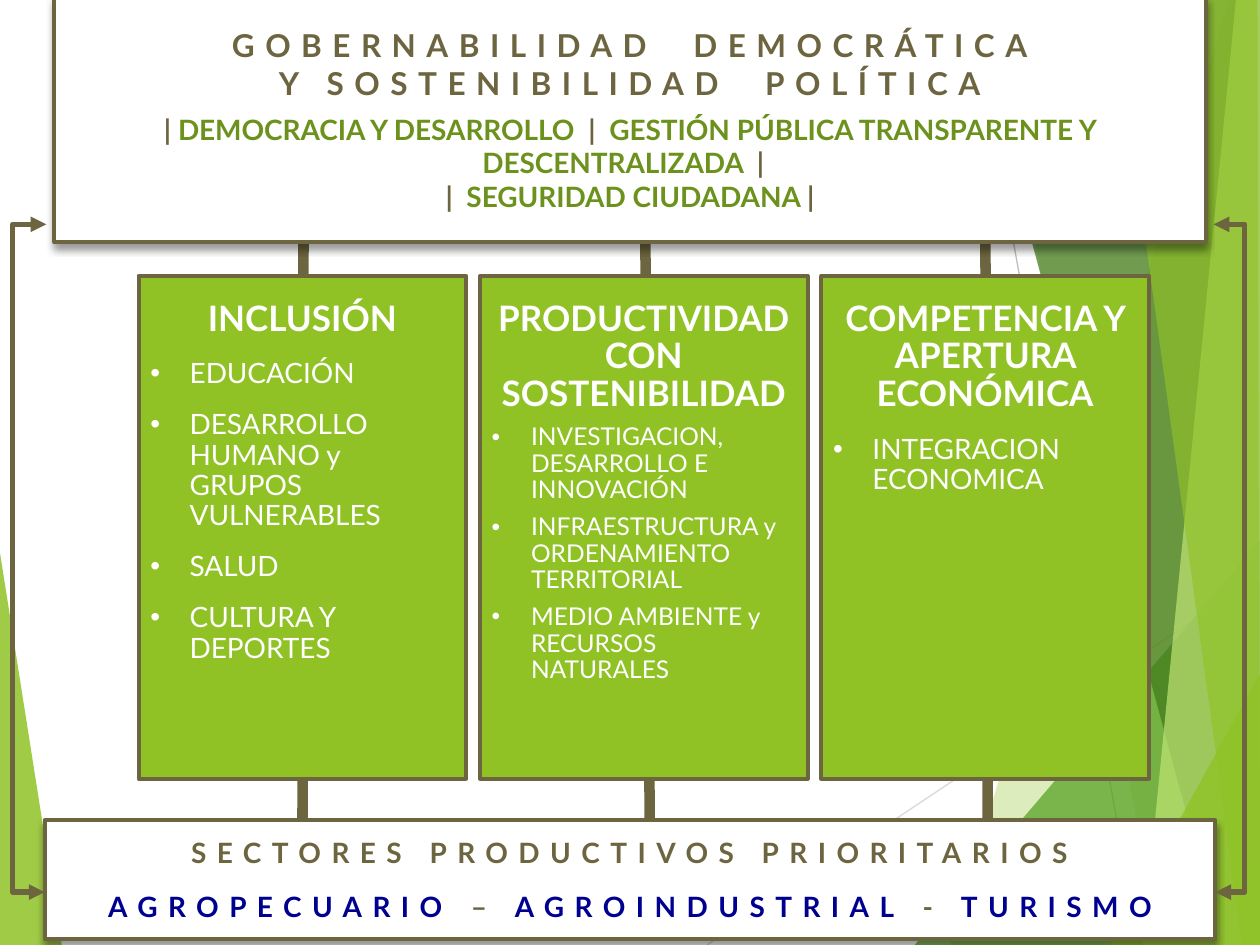
from lxml.etree import SubElement
from pptx import Presentation
from pptx.dml.color import RGBColor
from pptx.enum.shapes import MSO_CONNECTOR as CONN, MSO_SHAPE as SHAPE
from pptx.enum.text import MSO_ANCHOR as ANCHOR, MSO_AUTO_SIZE as AUTO, PP_ALIGN as ALIGN
from pptx.oxml.ns import qn
from pptx.util import Pt

FONT = "Lato"
WHITE = RGBColor(0xFF, 0xFF, 0xFF)
BROWN = RGBColor(0x6D, 0x65, 0x40)
LIME = RGBColor(0x90, 0xC2, 0x26)
OLIVE = RGBColor(0x6C, 0x92, 0x1D)
NAVY = RGBColor(0x00, 0x00, 0x90)
GREEN = RGBColor(0x54, 0xA0, 0x21)
FOREST = RGBColor(0x3F, 0x78, 0x19)
PALE = RGBColor(0xC0, 0xE4, 0x74)
SILVER = RGBColor(0xD9, 0xD9, 0xD9)
GREY = RGBColor(0xBF, 0xBF, 0xBF)

RAYS = [
    (LIME, 30, [(702, 0), (543, 540), (720, 540), (720, 0)]),
    (LIME, 20, [(567.4, 0), (661.7, 540), (720, 540), (720, 0)]),
    (GREEN, 72, [(522.7, 540), (720, 308.9), (720, 540)]),
    (FOREST, 70, [(552.2, 0), (698.4, 540), (720, 540), (720, 0)]),
    (PALE, 70, [(706.3, 0), (653, 540), (720, 540), (720, 0)]),
    (LIME, 65, [(635.8, 0), (709.9, 540), (720, 540), (718.6, 0)]),
    (LIME, 80, [(634.3, 540), (720, 385.2), (720, 540)]),
]

COLUMNS = [
    ("INCLUSIÓN", 16, 12,
     ["EDUCACIÓN", "DESARROLLO HUMANO y GRUPOS VULNERABLES", "SALUD",
      "CULTURA Y DEPORTES"]),
    ("PRODUCTIVIDAD CON SOSTENIBILIDAD", 14, 6,
     ["INVESTIGACION, DESARROLLO E INNOVACIÓN",
      "INFRAESTRUCTURA y ORDENAMIENTO TERRITORIAL",
      "MEDIO AMBIENTE y RECURSOS NATURALES"]),
    ("COMPETENCIA Y APERTURA ECONÓMICA", 16, 12, ["INTEGRACION ECONOMICA"]),
]


def add_ray(s, color, alpha, points):
    corners = [(Pt(x), Pt(y)) for x, y in points]
    fb = s.shapes.build_freeform(*corners[0])
    fb.add_line_segments(corners[1:], close=True)
    sp = fb.convert_to_shape()
    sp.shadow.inherit = False
    sp.line.fill.background()
    sp.fill.solid()
    sp.fill.fore_color.rgb = color
    clr = sp.fill._xPr.find(".//" + qn("a:srgbClr"))
    SubElement(clr, qn("a:alpha"), val=str(alpha * 1000))


def add_line(s, x1, y1, x2, y2, color, width, kind=CONN.STRAIGHT):
    line = s.shapes.add_connector(kind, Pt(x1), Pt(y1), Pt(x2), Pt(y2))
    line.line.color.rgb = color
    line.line.width = Pt(width)
    SubElement(line._element.spPr, qn("a:effectLst"))
    return line


def add_bracket(s, x1, x2, bend):
    line = add_line(s, x1, 128.2, x2, 509.8, BROWN, 3, CONN.ELBOW)
    geom = line._element.spPr.find(qn("a:prstGeom"))
    guides = geom.find(qn("a:avLst"))
    if guides is None:
        guides = SubElement(geom, qn("a:avLst"))
    SubElement(guides, qn("a:gd"), name="adj1", fmla=f"val {round(bend * 100000)}")
    ln = line.line._get_or_add_ln()
    for end in ("a:headEnd", "a:tailEnd"):
        SubElement(ln, qn(end), type="triangle")


def style_box(sp, fill):
    sp.fill.solid()
    sp.fill.fore_color.rgb = fill
    sp.line.color.rgb = BROWN
    sp.line.width = Pt(2.25)
    sp.shadow.inherit = False
    sp.text_frame.word_wrap = True


def set_margins(tf, left, top, right, bottom):
    tf.margin_left, tf.margin_top = Pt(left), Pt(top)
    tf.margin_right, tf.margin_bottom = Pt(right), Pt(bottom)


def add_shadow(sp):
    effects = sp._element.spPr.find(qn("a:effectLst"))
    shadow = SubElement(effects, qn("a:outerShdw"), blurRad=str(Pt(4)),
                        dist=str(Pt(3)), dir="5400000", rotWithShape="0")
    clr = SubElement(shadow, qn("a:srgbClr"), val="000000")
    SubElement(clr, qn("a:alpha"), val="40000")


def format_run(r, size, color, bold=True, spacing=0):
    r.font.name = FONT
    r.font.size = Pt(size)
    r.font.bold = bold
    r.font.color.rgb = color
    r._r.get_or_add_rPr().set("spc", str(spacing * 100))


def write_lines(tf, lines):
    tf.vertical_anchor = ANCHOR.MIDDLE
    for i, (size, spacing, before, after, parts) in enumerate(lines):
        p = tf.add_paragraph() if i else tf.paragraphs[0]
        p.alignment = ALIGN.CENTER
        p.space_before = Pt(before)
        p.space_after = Pt(after)
        for text, color in parts:
            r = p.add_run()
            r.text = text
            format_run(r, size, color, spacing=spacing)


def add_bullet(p):
    pPr = p._p.get_or_add_pPr()
    pPr.set("marL", str(Pt(22.5)))
    pPr.set("indent", str(Pt(-22.5)))
    SubElement(pPr, qn("a:buFont"), typeface="Arial")
    SubElement(pPr, qn("a:buChar"), char="•")


def add_column(s, left, heading, size, gap, items):
    sp = s.shapes.add_shape(SHAPE.RECTANGLE, Pt(left), Pt(157.7), Pt(187.2), Pt(287.3))
    style_box(sp, LIME)
    tf = sp.text_frame
    tf.vertical_anchor = ANCHOR.TOP
    set_margins(tf, 6.7, 14.2, 6.7, 6.7)
    tf.text = "\n".join([heading] + items)
    for i, p in enumerate(tf.paragraphs):
        p.alignment = ALIGN.LEFT if i else ALIGN.CENTER
        if i:
            add_bullet(p)
        p.line_spacing = 0.9
        p.space_after = Pt(gap)
        format_run(p.runs[0], size if i else 20, WHITE, bold=i == 0)


def add_title(s):
    sp = s.shapes.title
    s.shapes._spTree.append(sp._element)
    sp.left, sp.top, sp.width, sp.height = Pt(31), Pt(-1.5), Pt(658), Pt(139.8)
    style_box(sp, WHITE)
    add_shadow(sp)
    tf = sp.text_frame
    tf.auto_size = AUTO.NONE
    set_margins(tf, 3, 3.6, 3, 3.6)
    write_lines(tf, [
        (18, 6, 0, 0, [("GOBERNABILIDAD  DEMOCRÁTICA", BROWN)]),
        (18, 6, 0, 6, [("Y SOSTENIBILIDAD  POLÍTICA", BROWN)]),
        (16, 0, 0, 0, [("| ", BROWN), ("DEMOCRACIA Y DESARROLLO  ", OLIVE), ("|", BROWN),
                       ("  GESTIÓN PÚBLICA TRANSPARENTE Y DESCENTRALIZADA  ", OLIVE),
                       ("|  ", BROWN)]),
        (16, 0, 0, 0, [("|", BROWN), ("  SEGURIDAD CIUDADANA ", OLIVE), ("|", BROWN)]),
    ])


def add_sectors(s):
    sp = s.shapes.add_shape(SHAPE.RECTANGLE, Pt(25.5), Pt(468.6), Pt(669), Pt(67.9))
    style_box(sp, WHITE)
    add_shadow(sp)
    write_lines(sp.text_frame, [
        (16, 6, 0, 6, [("SECTORES PRODUCTIVOS PRIORITARIOS", BROWN)]),
        (16, 6, 6, 6, [("AGROPECUARIO ", NAVY), ("– ", BROWN), ("AGROINDUSTRIAL", NAVY),
                       (" - ", BROWN), ("TURISMO", NAVY)]),
    ])


def main():
    prs = Presentation()
    prs.slide_width, prs.slide_height = Pt(720), Pt(540)
    s = prs.slides.add_slide(prs.slide_layouts[5])
    add_ray(s, LIME, 85, [(0, 316), (35.3, 540), (0, 540)])
    add_line(s, 404, 540, 720, 329, SILVER, 0.75)
    add_line(s, 554.4, 0, 650.9, 540, GREY, 0.75)
    for ray in RAYS:
        add_ray(s, *ray)
    for top_x, bottom_x in [(563, 564.5), (368.6, 371.5), (173.5, 172.8)]:
        add_line(s, top_x, 112.3, bottom_x, 496.8, BROWN, 6)
    for i, column in enumerate(COLUMNS):
        add_column(s, 79.2 + i * 195.1, *column)
    add_title(s)
    add_sectors(s)
    add_bracket(s, 26.5, 25.5, 19.4)
    add_bracket(s, 693.5, 694.5, 18)
    prs.save("out.pptx")


if __name__ == "__main__":
    main()
